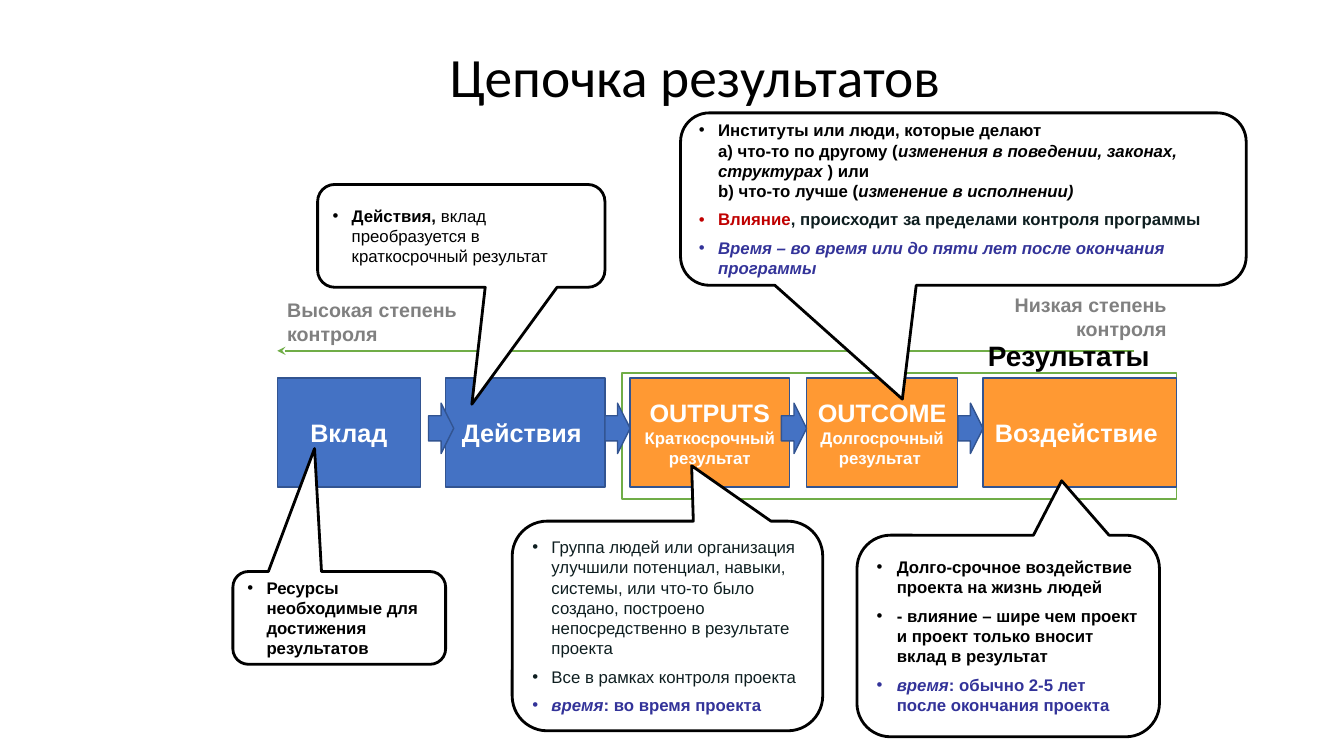
from dataclasses import dataclass

from lxml import etree
from pptx import Presentation
from pptx.dml.color import RGBColor
from pptx.enum.shapes import MSO_CONNECTOR, MSO_SHAPE
from pptx.enum.text import MSO_ANCHOR, PP_ALIGN
from pptx.oxml.ns import qn
from pptx.util import Inches, Pt

RECT = MSO_SHAPE.RECTANGLE
RIGHT_ARROW = MSO_SHAPE.RIGHT_ARROW
CALLOUT = MSO_SHAPE.ROUNDED_RECTANGULAR_CALLOUT
STRAIGHT = MSO_CONNECTOR.STRAIGHT
MIDDLE, TOP = MSO_ANCHOR.MIDDLE, MSO_ANCHOR.TOP
LEFT, CENTER, RIGHT = PP_ALIGN.LEFT, PP_ALIGN.CENTER, PP_ALIGN.RIGHT


@dataclass(frozen=True)
class Theme:
    heading_font: str = "Calibri"
    font: str = "Arial"
    title_size: float = 39.6
    results_size: float = 20
    stage_size: float = 18
    control_size: float = 14
    note_size: float = 12
    black: str = "000000"
    white: str = "FFFFFF"
    ink: str = "0E1E20"
    gray: str = "808080"
    red: str = "C00000"
    indigo: str = "333399"
    blue: str = "4472C4"
    blue_edge: str = "325491"
    orange: str = "FF9933"
    green: str = "70AD47"


THEME = Theme()

# Left, width, fill, name and explanation of each stage
STAGES = [
    (2.75, 1.42, THEME.blue, "Вклад", ""),
    (4.42, 1.58, THEME.blue, "Действия ", ""),
    (6.25, 1.58, THEME.orange, "OUTPUTS", "Краткосрочный результат"),
    (8, 1.5, THEME.orange, "OUTCOME", "Долгосрочный результат "),
    (9.75, 1.92, THEME.orange, "Воздействие ", ""),
]

# Box, tip of the pointer, bullet indent, and bullets as runs of (text, colour, style)
NOTES = [
    ((2.31, 5.67, 2.11, 0.92), (3.12, 4.45), 0.19, [
        [("Ресурсы необходимые для достижения результатов", THEME.black, "b")],
    ]),
    ((3.15, 1.83, 2.85, 1.02), (4.68, 4.01), 0.19, [
        [("Действия, ", THEME.black, "b"),
         ("вклад преобразуется в краткосрочный результат", THEME.black, "")],
    ]),
    ((5.08, 5.17, 3.08, 2.08), (6.86, 4.62), 0.19, [
        [("Группа людей или организация улучшили потенциал, навыки, системы, "
          "или что-то было создано, построено непосредственно в результате проекта",
          THEME.ink, "")],
        [("Все в рамках контроля проекта", THEME.ink, "")],
        [("время", THEME.indigo, "bi"), (": во время проекта", THEME.indigo, "b")],
    ]),
    ((6.75, 1.12, 5.61, 1.71), (8.95, 3.96), 0.19, [
        [("Институты или люди, которые делают \na) что-то по другому (", THEME.black, "b"),
         ("изменения в поведении, законах, структурах ", THEME.black, "bi"),
         (") или \nb) что-то лучше (", THEME.black, "b"),
         ("изменение в исполнении)", THEME.black, "bi")],
        [("Влияние", THEME.red, "b"),
         (", происходит за пределами контроля программы", THEME.ink, "b")],
        [("Время – во время или до пяти лет после окончания программы",
          THEME.indigo, "bi")],
    ]),
    ((8.5, 5.31, 3, 2), (10.53, 4.77), 0.2, [
        [("Долго-срочное воздействие проекта на жизнь людей", THEME.black, "b")],
        [("- влияние – шире чем проект и проект только вносит вклад в результат",
          THEME.black, "b")],
        [("время", THEME.indigo, "bi"),
         (": обычно 2-5 лет после окончания проекта", THEME.indigo, "b")],
    ]),
]


def rgb(color):
    return RGBColor.from_string(color)


def add_text(paragraph, text, size, color, style="b", font=THEME.font):
    """Add runs to the paragraph, with a line break at each newline."""
    for index, line in enumerate(text.split("\n")):
        if index:
            paragraph.add_line_break()
        run = paragraph.add_run()
        run.text = line
        run.font.name = font
        run.font.size = Pt(size)
        run.font.color.rgb = rgb(color)
        run.font.bold = "b" in style
        run.font.italic = "i" in style


def paragraphs(frame, count):
    return [frame.paragraphs[0]] + [frame.add_paragraph() for _ in range(count - 1)]


def add_block(slide, kind, box, fill, edge, weight=1):
    block = slide.shapes.add_shape(kind, *map(Inches, box))
    block.shadow.inherit = False
    block.fill.solid()
    block.fill.fore_color.rgb = rgb(fill)
    block.line.color.rgb = rgb(edge)
    block.line.width = Pt(weight)
    block.text_frame.word_wrap = True
    block.text_frame.vertical_anchor = MIDDLE
    return block


def add_title(slide, box):
    title = slide.shapes.title
    title.left, title.top, title.width, title.height = map(Inches, box)
    title.text_frame.vertical_anchor = MIDDLE
    heading = title.text_frame.paragraphs[0]
    heading.alignment = LEFT
    heading.line_spacing = 0.9
    add_text(heading, "Цепочка результатов", THEME.title_size, THEME.black, "",
             THEME.heading_font)


def add_control_arrow(slide, left, right, top):
    arrow = slide.shapes.add_connector(
        STRAIGHT, Inches(left), Inches(top), Inches(right), Inches(top))
    arrow.line.color.rgb = rgb(THEME.green)
    arrow.line.width = Pt(1.5)
    etree.SubElement(arrow.line._get_or_add_ln(), qn("a:headEnd"), type="stealth")
    etree.SubElement(arrow._element.spPr, qn("a:effectLst"))


def add_stage(slide, box, fill, name, explanation):
    stage = add_block(slide, RECT, box, fill, THEME.blue_edge)
    lines = [(name, THEME.stage_size)]
    if explanation:
        lines.append((explanation, THEME.note_size))
    for paragraph, (text, size) in zip(paragraphs(stage.text_frame, len(lines)), lines):
        paragraph.alignment = CENTER
        add_text(paragraph, text, size, THEME.white)


def add_chain(slide, top, height):
    """Draw the stages in a row, with an arrow leading to each next one."""
    for left, width, fill, name, explanation in STAGES:
        add_stage(slide, (left, top, width, height), fill, name, explanation)
    for step in range(len(STAGES) - 1):
        add_block(slide, RIGHT_ARROW, (4.25 + 1.75 * step, top + 0.25, 0.25, 0.5),
                  THEME.blue, THEME.blue_edge)


def add_note(slide, box, tip, indent, bullets):
    """Draw a callout whose pointer ends at the tip."""
    left, top, width, height = box
    note = add_block(slide, CALLOUT, box, THEME.white, THEME.black, 2)
    note.adjustments[0] = (tip[0] - left) / width - 0.5
    note.adjustments[1] = (tip[1] - top) / height - 0.5
    for paragraph, runs in zip(paragraphs(note.text_frame, len(bullets)), bullets):
        paragraph.alignment = LEFT
        paragraph.space_before = Pt(THEME.note_size / 2)
        properties = paragraph._p.get_or_add_pPr()
        properties.set("marL", str(Inches(indent)))
        properties.set("indent", str(-Inches(indent)))
        etree.SubElement(properties, qn("a:buFont"), typeface=THEME.font)
        etree.SubElement(properties, qn("a:buChar"), char="•")
        for text, color, style in runs:
            add_text(paragraph, text, THEME.note_size, color, style)


def add_label(slide, box, text, size, color, alignment):
    frame = slide.shapes.add_textbox(*map(Inches, box)).text_frame
    frame.word_wrap = True
    frame.vertical_anchor = TOP
    frame.paragraphs[0].alignment = alignment
    add_text(frame.paragraphs[0], text, size, color)


def main():
    deck = Presentation()
    deck.slide_width, deck.slide_height = Inches(13.33), Inches(7.5)
    slide = deck.slides.add_slide(deck.slide_layouts[5])
    add_control_arrow(slide, 2.75, 11.25, 3.48)
    add_block(slide, RECT, (6.17, 3.7, 5.5, 1.25), THEME.white, THEME.green)
    add_title(slide, (4.36, 0.46, 7.31, 0.65))
    add_chain(slide, 3.75, 1.08)
    for note in NOTES:
        add_note(slide, *note)
    add_label(slide, (9.41, 3.31, 2.09, 0.44), "Результаты",
              THEME.results_size, THEME.black, RIGHT)
    add_label(slide, (2.75, 2.91, 2.5, 0.57), "Высокая степень контроля",
              THEME.control_size, THEME.gray, LEFT)
    add_label(slide, (9.17, 2.86, 2.5, 0.57), "Низкая степень контроля",
              THEME.control_size, THEME.gray, RIGHT)
    deck.save("out.pptx")


if __name__ == "__main__":
    main()
